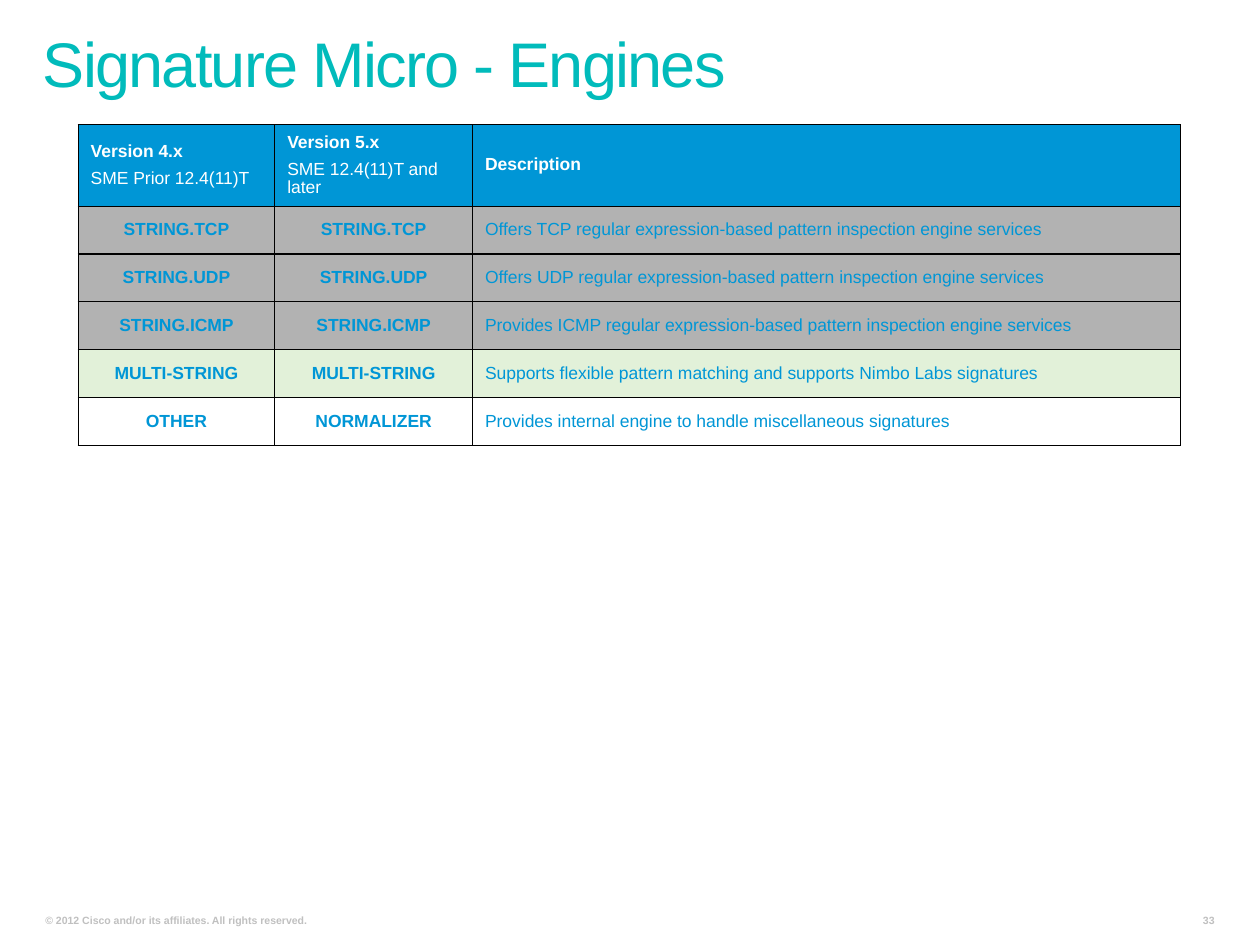
from lxml import etree
from pptx import Presentation
from pptx.dml.color import RGBColor
from pptx.enum.text import MSO_ANCHOR, MSO_AUTO_SIZE, PP_ALIGN
from pptx.oxml.ns import qn
from pptx.util import Inches, Pt

LEFT, CENTER, RIGHT = PP_ALIGN.LEFT, PP_ALIGN.CENTER, PP_ALIGN.RIGHT
MIDDLE, BOTTOM = MSO_ANCHOR.MIDDLE, MSO_ANCHOR.BOTTOM
NO_AUTOFIT = MSO_AUTO_SIZE.NONE
TITLE_ONLY = 5

FONT = "Arial"
COLORS = {
    "title": "01BBBB",
    "blue": "0096D6",
    "white": "FFFFFF",
    "gray": "B2B2B2",
    "green": "E2F1D9",
    "footer": "C0C0C0",
    "border": "000000",
}

COLUMN_WIDTHS = (1.56, 1.57, 5.62)
HEADER_HEIGHT, ROW_HEIGHT = 0.64, 0.38
HEADERS = (
    "Version 4.x\nSME Prior 12.4(11)T",
    "Version 5.x\nSME 12.4(11)T and later",
    "Description",
)
ENGINES = (
    ("gray", "STRING.TCP", "STRING.TCP",
     "Offers TCP regular expression-based pattern inspection engine services"),
    ("gray", "STRING.UDP", "STRING.UDP",
     "Offers UDP regular expression-based pattern inspection engine services"),
    ("gray", "STRING.ICMP", "STRING.ICMP",
     "Provides ICMP regular expression-based pattern inspection engine services"),
    ("green", "MULTI-STRING", "MULTI-STRING",
     "Supports flexible pattern matching and supports Nimbo Labs signatures"),
    ("white", "OTHER", "NORMALIZER",
     "Provides internal engine to handle miscellaneous signatures"),
)


def format_paragraph(paragraph, size, color, bold=False, align=LEFT, line_spacing=1.0):
    paragraph.alignment = align
    paragraph.line_spacing = line_spacing
    for run in paragraph.runs:
        run.font.name = FONT
        run.font.size = Pt(size)
        run.font.bold = bold
        run.font.color.rgb = RGBColor.from_string(COLORS[color])


def set_margins(frame, horizontal, vertical):
    frame.margin_left = frame.margin_right = Inches(horizontal)
    frame.margin_top = frame.margin_bottom = Inches(vertical)


def set_title(slide, wording):
    title = slide.shapes.title
    title.left, title.top = Inches(0.25), Inches(0.17)
    title.width, title.height = Inches(9.39), Inches(0.67)
    frame = title.text_frame
    frame.text = wording
    frame.auto_size = NO_AUTOFIT
    frame.vertical_anchor = BOTTOM
    set_margins(frame, 0.09, 0.05)
    heading = frame.paragraphs[0]
    format_paragraph(heading, 36, "title", line_spacing=0.8)
    heading.runs[0].font._element.set("spc", "-100")


def add_footer(slide, wording, left, width, align, wrap):
    box = slide.shapes.add_textbox(Inches(left), Inches(7.2), Inches(width), Inches(0.19))
    frame = box.text_frame
    frame.text = wording
    frame.word_wrap = wrap
    frame.vertical_anchor = BOTTOM
    set_margins(frame, 0.09, 0.04)
    format_paragraph(frame.paragraphs[0], 6, "footer", bold=True, align=align)


def add_borders(cell):
    properties = cell._tc.get_or_add_tcPr()
    for side in ("a:lnL", "a:lnR", "a:lnT", "a:lnB"):
        line = etree.SubElement(properties, qn(side), w=str(Pt(0.75)))
        fill = etree.SubElement(line, qn("a:solidFill"))
        etree.SubElement(fill, qn("a:srgbClr"), val=COLORS["border"])


def fill_cell(cell, wording, background, color, bold, align):
    add_borders(cell)
    cell.fill.solid()
    cell.fill.fore_color.rgb = RGBColor.from_string(COLORS[background])
    cell.vertical_anchor = MIDDLE
    cell.text_frame.text = wording
    for index, paragraph in enumerate(cell.text_frame.paragraphs):
        format_paragraph(paragraph, 10, color, bold and index == 0, align, 0.95)
        if index:
            paragraph.space_before = Pt(5)


def add_engine_table(slide):
    row_count = len(ENGINES) + 1
    height = HEADER_HEIGHT + ROW_HEIGHT * len(ENGINES)
    table = slide.shapes.add_table(
        row_count, len(COLUMN_WIDTHS), Inches(0.62), Inches(0.99),
        Inches(sum(COLUMN_WIDTHS)), Inches(height)).table
    for column, width in zip(table.columns, COLUMN_WIDTHS):
        column.width = Inches(width)
    for index, row in enumerate(table.rows):
        row.height = Inches(ROW_HEIGHT if index else HEADER_HEIGHT)
    for column, header in enumerate(HEADERS):
        fill_cell(table.cell(0, column), header, "blue", "white", True, LEFT)
    for row, (background, *entries) in enumerate(ENGINES, start=1):
        for column, entry in enumerate(entries):
            is_name = column < 2
            fill_cell(table.cell(row, column), entry, background, "blue",
                      is_name, CENTER if is_name else LEFT)


def main():
    presentation = Presentation()
    presentation.slide_width, presentation.slide_height = Inches(10), Inches(7.5)
    slide = presentation.slides.add_slide(presentation.slide_layouts[TITLE_ONLY])
    add_footer(slide, "© 2012 Cisco and/or its affiliates. All rights reserved.",
               0.27, 3.74, LEFT, True)
    add_footer(slide, "33", 9.45, 0.28, RIGHT, False)
    add_engine_table(slide)
    set_title(slide, "Signature Micro - Engines")
    presentation.save("out.pptx")


if __name__ == "__main__":
    main()
